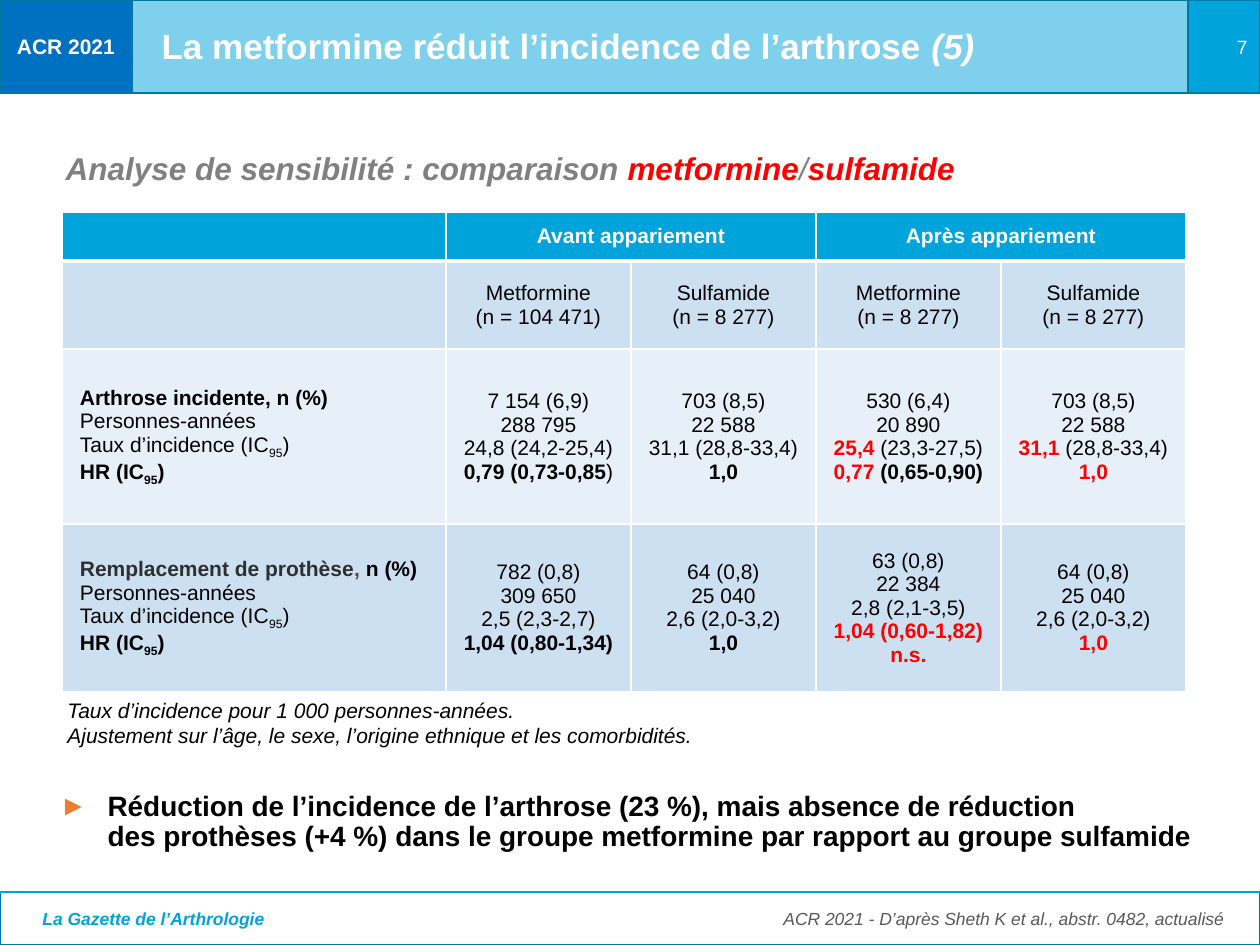
import copy
import itertools
import pptx
import pptx.util
import pptx.dml.color
import pptx.enum.shapes
import pptx.enum.text
import pptx.oxml
import pptx.oxml.ns

SCALE = 914400 / 126
ALIGN = pptx.enum.text.PP_ALIGN
ANCHOR = pptx.enum.text.MSO_ANCHOR
TINTS = {"~": "FF0000", "§": "2F2F2F", "¤": "505050"}
MARKS = "*^_~§¤"
WHITE, BLUE, EDGE = "FFFFFF", "00A3DA", "0079A1"
DARK, LIGHT = "CCE0F1", "E7F0F8"


def px(count):
    return pptx.util.Emu(round(count * SCALE))


def color(code):
    return pptx.dml.color.RGBColor.from_string(code)


def node(parent, tag, **attrs):
    item = pptx.oxml.parse_xml(f"<a:{tag} {pptx.oxml.ns.nsdecls('a')}/>")
    for key, value in attrs.items():
        item.set(key, str(value))
    parent.append(item)
    return item


def kind(char):
    return "mark" if char in MARKS else "break" if char == "\v" else "text"


class Deck:
    font = "Arial"

    def __init__(self, wide, high):
        self.file = pptx.Presentation()
        self.file.slide_width, self.file.slide_height = px(wide), px(high)
        self.slide = self.file.slides.add_slide(self.file.slide_layouts[3])
        self.shapes = self.slide.shapes

    def line(self, para, text, size, tint, bold=False, slant=False, align=ALIGN.LEFT):
        para.alignment = align
        flags = set()
        for sort, chars in itertools.groupby(text, kind):
            piece = "".join(chars)
            if sort == "mark":
                flags ^= set(piece)
            elif sort == "break":
                para.add_line_break()
            else:
                run = para.add_run()
                run.text = piece
                font = run.font
                font.name, font.size = self.font, pptx.util.Pt(size)
                font.bold = bold ^ ("*" in flags)
                font.italic = slant ^ ("^" in flags)
                code = next((TINTS[m] for m in TINTS if m in flags), tint)
                font.color.rgb = color(code)
                if "_" in flags:
                    run._r.get_or_add_rPr().set("baseline", "-25000")
        for gap in para._p.findall(pptx.oxml.ns.qn("a:br")):
            gap.append(copy.deepcopy(run._r.rPr))

    def fill(self, frame, text, *style, **more):
        lines = text.split("\n")
        frame.text = "\n" * (len(lines) - 1)
        for para, text in zip(frame.paragraphs, lines):
            self.line(para, text, *style, **more)

    def rect(self, box, tint, text="", size=12, alpha=None, **more):
        shape = self.shapes.add_shape(
            pptx.enum.shapes.MSO_SHAPE.RECTANGLE, *map(px, box))
        shape.shadow.inherit = False
        shape.fill.solid()
        shape.fill.fore_color.rgb = color(tint)
        shape.line.color.rgb = color(EDGE)
        shape.line.width = 0
        if alpha:
            node(shape._element.spPr.find(".//" + pptx.oxml.ns.qn("a:srgbClr")),
                 "alpha", val=alpha * 1000)
        if text:
            shape.text_frame.vertical_anchor = ANCHOR.MIDDLE
            self.fill(shape.text_frame, text, size, WHITE, **more)

    def rule(self, start, end, tint):
        line = self.shapes.add_connector(
            pptx.enum.shapes.MSO_CONNECTOR.STRAIGHT, *map(px, start + end))
        line.line.color.rgb = color(tint)
        line.line.width = pptx.util.Pt(0.75)
        node(line._element.spPr, "effectLst")

    def label(self, box, text, size, tint, **more):
        frame = self.shapes.add_textbox(*map(px, box)).text_frame
        frame.word_wrap = True
        self.fill(frame, text, size, tint, **more)

    def holder(self, index, box, text, size, tint, anchor=ANCHOR.TOP, before=0,
               bullet=None, **more):
        shape = self.slide.placeholders[index]
        shape.left, shape.top, shape.width, shape.height = map(px, box)
        self.shapes._spTree.append(shape._element)
        frame = shape.text_frame
        frame.auto_size = pptx.enum.text.MSO_AUTO_SIZE.NONE
        frame.word_wrap = True
        frame.vertical_anchor = anchor
        self.fill(frame, text, size, tint, bold=True, **more)
        para = frame.paragraphs[0]
        para.line_spacing = 0.9
        para.space_before = pptx.util.Pt(before)
        props = para._p.get_or_add_pPr()
        indent = px(48) if bullet else 0
        props.set("marL", str(indent))
        props.set("indent", str(-indent))
        if bullet:
            node(node(props, "buClr"), "srgbClr", val=bullet)
            node(props, "buFont", typeface=self.font)
            node(props, "buChar", char="►")
        else:
            node(props, "buNone")

    def cell(self, cell, text, back, head, side):
        props = cell._tc.get_or_add_tcPr()
        for edge in "LRTB":
            width = 3 if head and edge == "B" else 1
            line = node(props, "ln" + edge, w=pptx.util.Pt(width))
            node(node(line, "solidFill"), "srgbClr", val=WHITE)
        cell.fill.solid()
        cell.fill.fore_color.rgb = color(back)
        cell.margin_left = cell.margin_right = px(5)
        cell.margin_top = cell.margin_bottom = px(3)
        cell.vertical_anchor = ANCHOR.MIDDLE
        if text:
            self.fill(cell.text_frame, text, 12, WHITE if head else "000000",
                      bold=head, align=ALIGN.LEFT if side else ALIGN.CENTER)
        if side:
            for para in cell.text_frame.paragraphs:
                para._p.get_or_add_pPr().set("marL", str(px(13)))

    def table(self, left, top, cols, rows, data, backs):
        grid = self.shapes.add_table(
            len(rows), len(cols), *map(px, (left, top, sum(cols), sum(rows)))).table
        for col, size in zip(grid.columns, cols):
            col.width = px(size)
        for row, size in zip(grid.rows, rows):
            row.height = px(size)
        for row, (texts, back) in enumerate(zip(data, backs)):
            for col, text in enumerate(texts):
                self.cell(grid.cell(row, col), text, back, row == 0, col == 0)
        for col in (1, 3):
            grid.cell(0, col).merge(grid.cell(0, col + 1))


RATES = "\nPersonnes-années\nTaux d’incidence (IC_95_)\n*HR (IC_95_)"
DATA = [
    ["", "Avant appariement", "", "Après appariement", ""],
    ["", "Metformine\n(n = 104 471)", "Sulfamide\n(n = 8 277)",
     "Metformine\n(n = 8 277)", "Sulfamide\n(n = 8 277)"],
    ["*Arthrose incidente, n (%)" + RATES,
     "7 154 (6,9)\n288 795\n24,8 (24,2-25,4)\n*0,79 (0,73-0,85*)",
     "703 (8,5)\n22 588\n31,1 (28,8-33,4)\n*1,0",
     "530 (6,4)\n20 890\n*~25,4*~ (23,3-27,5)\n*~0,77~ (0,65-0,90)",
     "703 (8,5)\n22 588\n*~31,1*~ (28,8-33,4)\n*~1,0"],
    ["*§Remplacement de prothèse§¤, ¤n (%)" + RATES,
     "782 (0,8)\n309 650\n2,5 (2,3-2,7)\n*1,04 (0,80-1,34)",
     "64 (0,8)\n25 040\n2,6 (2,0-3,2)\n*1,0",
     "63 (0,8)\n22 384\n2,8 (2,1-3,5)\n*~1,04 (0,60-1,82)\n*~n.s.",
     "64 (0,8)\n25 040\n2,6 (2,0-3,2)\n*~1,0"],
]


def main():
    deck = Deck(1260, 945)
    deck.rect((0, 892, 1260, 53), WHITE)
    deck.rect((132, 0, 1056, 93), BLUE, alpha=50)
    deck.rect((0, 0, 132, 93), "0070C0", "ACR 2021", bold=True, align=ALIGN.CENTER)
    deck.label((30, 902, 437, 34), "La Gazette de l’Arthrologie", 10, BLUE,
               bold=True, slant=True)
    deck.rule((0, 892), (1260, 892), BLUE)
    deck.rect((1188, 0, 72, 93), BLUE, "7", 11, align=ALIGN.RIGHT)
    deck.table(62, 212, [384] + [185] * 4, [49, 88, 175, 168], DATA,
               [BLUE, DARK, LIGHT, DARK])
    deck.holder(0, (53, 147, 1110, 64),
                "Analyse de sensibilité : comparaison ~metformine~*/*~sulfamide",
                18, "808080", slant=True)
    deck.holder(1, (149, 5, 1009, 86),
                "La metformine réduit l’incidence de l’arthrose ^(5)", 20, WHITE,
                anchor=ANCHOR.MIDDLE, before=10)
    deck.holder(2, (47, 786, 1170, 49),
                "Réduction de l’incidence de l’arthrose (23 %), mais absence de réduction \v"
                "des prothèses (+4 %) dans le groupe metformine par rapport au groupe sulfamide",
                16, "000000", before=10, bullet="ED7D31")
    deck.label((55, 691, 1024, 89),
               "Taux d’incidence pour 1 000 personnes-années.\n"
               "Ajustement sur l’âge, le sexe, l’origine ethnique et les comorbidités.",
               12, "000000", slant=True)
    deck.label((727, 902, 509, 34),
               "ACR 2021 - D’après Sheth K et al., abstr. 0482, actualisé",
               10, "595959", slant=True, align=ALIGN.RIGHT)
    deck.file.save("out.pptx")


if __name__ == "__main__":
    main()
